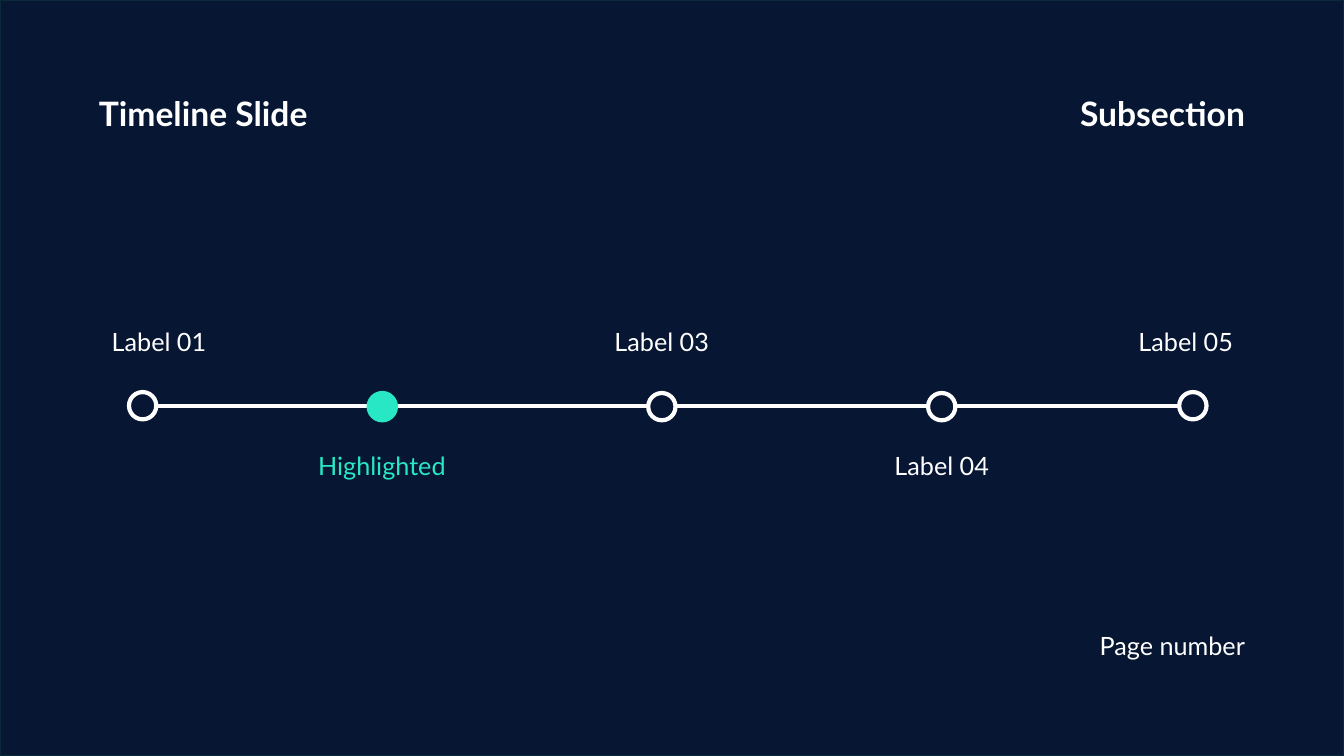
from lxml.etree import SubElement
from pptx import Presentation
from pptx.dml.color import RGBColor
from pptx.enum.shapes import MSO_CONNECTOR, MSO_SHAPE
from pptx.enum.text import MSO_ANCHOR, PP_ALIGN
from pptx.oxml.ns import qn
from pptx.util import Pt

COLORS = {"navy": "061633", "edge": "092A39", "white": "FFFFFF", "mint": "28E7C5"}
LEFT, MID, RIGHT = PP_ALIGN.LEFT, PP_ALIGN.CENTER, PP_ALIGN.RIGHT
TITLE = "Timeline Slide"
HEADS = [
    ("Subsection", 64.8, 35.3, 24, True, MSO_ANCHOR.MIDDLE),
    ("Page number", 449.3, 27.4, 18, False, MSO_ANCHOR.TOP),
]
STOPS = [
    ("Label 01", 101.9, 289.8, 72.7, 114.5, LEFT, "navy", "white"),
    ("Highlighted", 273.1, 290.5, 192.5, 160.6, MID, "mint", "mint"),
    ("Label 03", 472.8, 290.5, 392.4, 160.6, MID, "navy", "white"),
    ("Label 04", 672.7, 290.5, 592.4, 160.6, MID, "navy", "white"),
    ("Label 05", 852.1, 289.8, 763.2, 124.6, RIGHT, "navy", "white"),
]
WIDE, HIGH = 960, 540
DOT = 19.5
ABOVE, BELOW = 231.8, 320.4


def tint(name):
    return RGBColor.from_string(COLORS[name])


def write(box, text, align, size=18, bold=False, color="white", anchor=MSO_ANCHOR.TOP):
    frame = box.text_frame
    frame.text = text
    frame.word_wrap = True
    frame.vertical_anchor = anchor
    line = frame.paragraphs[0]
    line.alignment = align
    line.line_spacing = 0.9
    line.space_before = Pt(0)
    font = line.runs[0].font
    font.name, font.size, font.bold = "Lato", Pt(size), bold
    font.color.rgb = tint(color)


def label(slide, text, x, y, w, h, align, **style):
    box = slide.shapes.add_textbox(Pt(x), Pt(y), Pt(w), Pt(h))
    write(box, text, align, **style)


def draw(slide, kind, x, y, w, h, fill, edge, width):
    shape = slide.shapes.add_shape(kind, Pt(x), Pt(y), Pt(w), Pt(h))
    shape.shadow.inherit = False
    shape.fill.solid()
    shape.fill.fore_color.rgb = tint(fill)
    shape.line.color.rgb = tint(edge)
    shape.line.width = Pt(width)


def main():
    deck = Presentation()
    deck.slide_width, deck.slide_height = Pt(WIDE), Pt(HIGH)
    slide = deck.slides.add_slide(deck.slide_layouts[5])
    draw(slide, MSO_SHAPE.RECTANGLE, 0, 0, WIDE, HIGH, "navy", "edge", 1.5)

    title = slide.shapes.title
    title.left, title.top, title.width, title.height = Pt(63.4), Pt(64.8), Pt(261.4), Pt(35.3)
    write(title, TITLE, LEFT, 24, True, anchor=MSO_ANCHOR.MIDDLE)
    slide.shapes._spTree.append(title._element)
    for text, y, h, size, bold, anchor in HEADS:
        label(slide, text, 635, y, 261.4, h, RIGHT, size=size, bold=bold, anchor=anchor)

    start, end = STOPS[0][1], STOPS[-1][1] - DOT / 2
    level = Pt(STOPS[0][2])
    track = slide.shapes.add_connector(MSO_CONNECTOR.STRAIGHT, Pt(start), level, Pt(end), level)
    track.line.color.rgb = tint("white")
    track.line.width = Pt(3)
    SubElement(track._element.spPr, qn("a:effectLst"))

    for i, (text, x, y, left, width, align, fill, color) in enumerate(STOPS):
        draw(slide, MSO_SHAPE.OVAL, x - DOT / 2, y - DOT / 2, DOT, DOT, fill, color, 3)
        top = BELOW if i % 2 else ABOVE
        label(slide, text, left, top, width, 27.4, align, color=color)

    deck.save("out.pptx")


if __name__ == "__main__":
    main()
